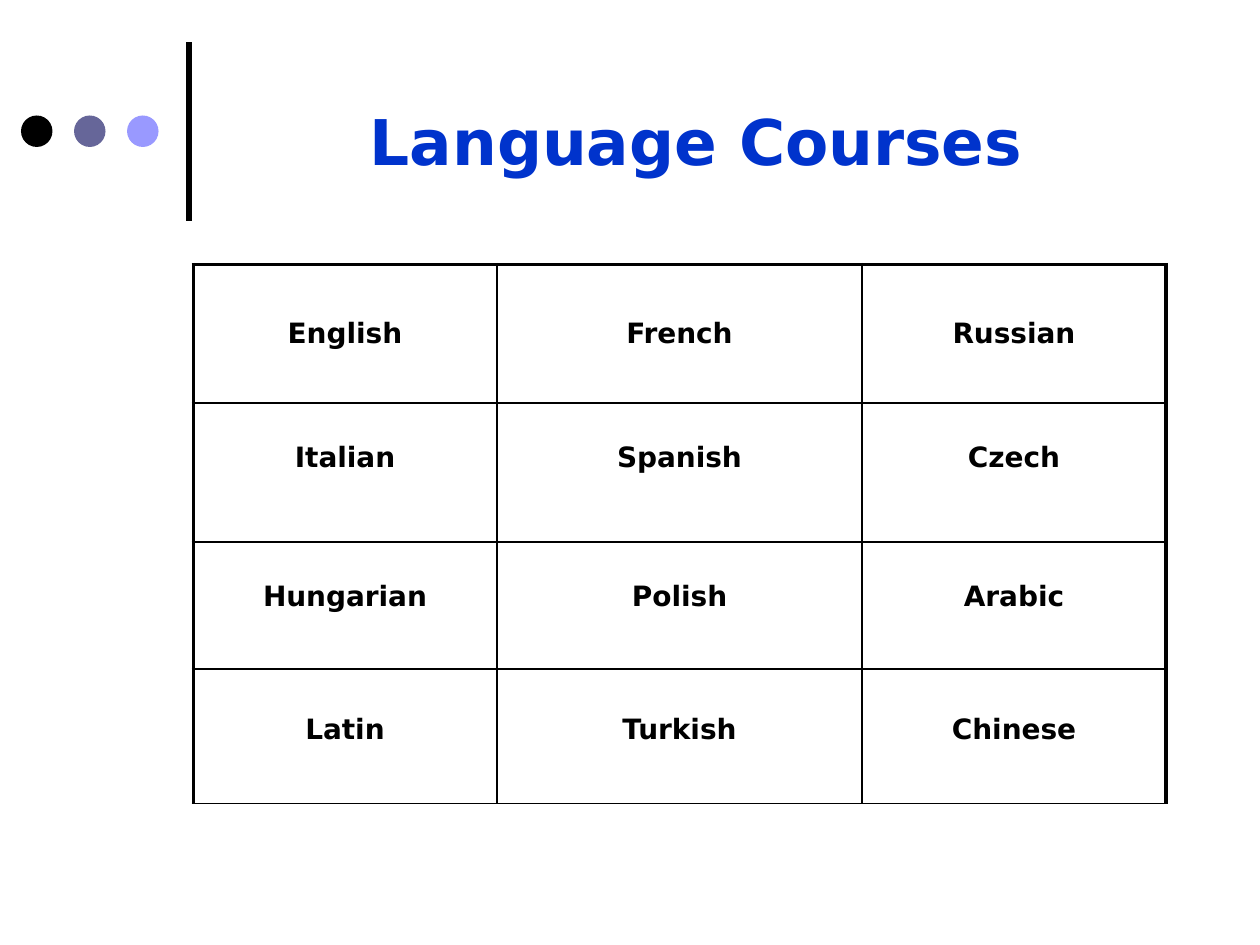
"""Build the Language Courses slide: a title, an ornament and a course grid."""
from dataclasses import dataclass

from lxml.etree import SubElement
from pptx import Presentation
from pptx.dml.color import RGBColor as Rgb
from pptx.enum.shapes import MSO_CONNECTOR as Connector, MSO_SHAPE as Shape
from pptx.enum.text import MSO_ANCHOR as Anchor, PP_ALIGN as Align
from pptx.oxml.ns import qn
from pptx.slide import Slide
from pptx.table import _Cell as Cell
from pptx.text.text import TextFrame
from pptx.util import Pt


@dataclass(frozen=True)
class Theme:
    """Colours, type sizes and line widths of the slide."""
    font: str = "DejaVu Sans"
    ink: str = "000000"
    title: str = "0033CC"
    slate: str = "666699"
    lilac: str = "9999FF"
    title_size: float = 36
    course_size: float = 16
    thin: float = 1
    thick: float = 2.25
    rule: float = 3


@dataclass(frozen=True)
class Dot:
    """One circle of the ornament."""
    left: float
    colour: str


@dataclass(frozen=True)
class CourseRow:
    """One row of courses, with its height and text placement."""
    courses: tuple[str, ...]
    height: float
    anchor: Anchor = Anchor.TOP
    top_margin: float = 22


THEME = Theme()
DOTS = [
    Dot(12 + 30.3 * place, colour)
    for place, colour in enumerate((THEME.ink, THEME.slate, THEME.lilac))
]
COLUMN_WIDTHS = (173.5, 208.8, 173.5)
COURSE_ROWS = (
    CourseRow(("English", "French", "Russian"), 79.2, Anchor.MIDDLE, 3.6),
    CourseRow(("Italian", "Spanish", "Czech"), 79.2),
    CourseRow(("Hungarian", "Polish", "Arabic"), 72.7),
    CourseRow(("Latin", "Turkish", "Chinese"), 77, top_margin=25.5),
)


def write(frame: TextFrame, text: str, size: float, colour: str) -> None:
    """Put centred bold text into a frame."""
    frame.text = text
    paragraph = frame.paragraphs[0]
    paragraph.alignment = Align.CENTER
    font = paragraph.runs[0].font
    font.name, font.size, font.bold = THEME.font, Pt(size), True
    font.color.rgb = Rgb.from_string(colour)


def draw_rule(slide: Slide) -> None:
    """Draw the upright rule beside the title."""
    rule = slide.shapes.add_connector(
        Connector.STRAIGHT, Pt(108), Pt(126), Pt(108), Pt(23.8)
    )
    rule.line.width = Pt(THEME.rule)
    rule.line.color.rgb = Rgb.from_string(THEME.ink)
    SubElement(rule._element.spPr, qn("a:effectLst"))


def draw_dot(slide: Slide, dot: Dot) -> None:
    """Draw one circle of the ornament."""
    circle = slide.shapes.add_shape(Shape.OVAL, Pt(dot.left), Pt(66), Pt(18), Pt(18))
    circle.shadow.inherit = False
    circle.fill.solid()
    circle.fill.fore_color.rgb = Rgb.from_string(dot.colour)
    circle.line.fill.background()


def draw_title(slide: Slide) -> None:
    """Place and fill the title placeholder."""
    title = slide.shapes.title
    title.left, title.top = Pt(121.7), Pt(31.7)
    title.width, title.height = Pt(552.2), Pt(97.2)
    title.text_frame.vertical_anchor = Anchor.MIDDLE
    write(title.text_frame, "Language Courses", THEME.title_size, THEME.title)


def set_borders(cell: Cell, widths: dict[str, float]) -> None:
    """Line the sides of a cell with the given widths."""
    properties = cell._tc.get_or_add_tcPr()
    for side, width in widths.items():
        border = SubElement(properties, qn(f"a:ln{side}"), w=str(Pt(width)))
        fill = SubElement(border, qn("a:solidFill"))
        SubElement(fill, qn("a:srgbClr"), val=THEME.ink)


def draw_courses(slide: Slide) -> None:
    """Draw the course grid with a thick frame on three sides."""
    table = slide.shapes.add_table(
        len(COURSE_ROWS), len(COLUMN_WIDTHS), Pt(110.4), Pt(151.2),
        Pt(sum(COLUMN_WIDTHS)), Pt(sum(row.height for row in COURSE_ROWS)),
    ).table
    table.first_row = table.horz_banding = False
    for column, width in zip(table.columns, COLUMN_WIDTHS):
        column.width = Pt(width)
    last = len(COLUMN_WIDTHS) - 1
    for row_index, row in enumerate(COURSE_ROWS):
        table.rows[row_index].height = Pt(row.height)
        for column_index, course in enumerate(row.courses):
            cell = table.cell(row_index, column_index)
            set_borders(cell, {
                "L": THEME.thick if column_index == 0 else THEME.thin,
                "R": THEME.thick if column_index == last else THEME.thin,
                "T": THEME.thick if row_index == 0 else THEME.thin,
                "B": THEME.thin,
            })
            cell.fill.background()
            cell.vertical_anchor = row.anchor
            cell.margin_top = Pt(row.top_margin)
            write(cell.text_frame, course, THEME.course_size, THEME.ink)


def main() -> None:
    """Build and save the slide."""
    deck = Presentation()
    deck.slide_width, deck.slide_height = Pt(720), Pt(540)
    slide = deck.slides.add_slide(deck.slide_layouts.get_by_name("Title Only"))
    draw_rule(slide)
    for dot in DOTS:
        draw_dot(slide, dot)
    draw_title(slide)
    draw_courses(slide)
    deck.save("out.pptx")


if __name__ == "__main__":
    main()
